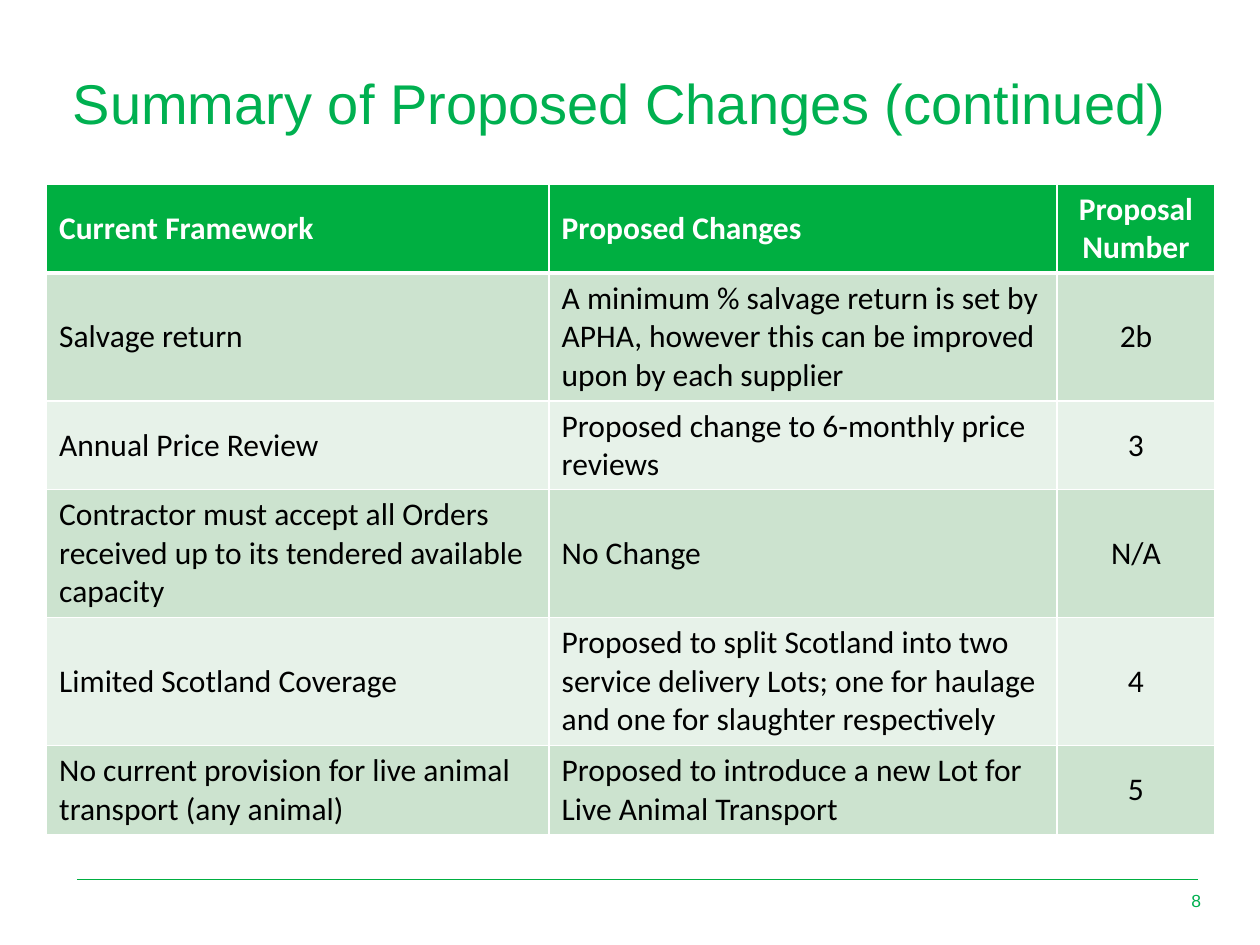
from dataclasses import dataclass

from lxml.etree import SubElement
from pptx import Presentation
from pptx.dml.color import RGBColor
from pptx.enum.shapes import MSO_CONNECTOR
from pptx.enum.text import MSO_ANCHOR, PP_ALIGN
from pptx.oxml.ns import qn
from pptx.slide import Slide
from pptx.table import _Cell
from pptx.text.text import TextFrame
from pptx.util import Cm, Pt

COLOURS = {
    "title": "00B050",
    "header": "00AF41",
    "dark_band": "CCE3CF",
    "light_band": "E7F2E9",
    "white": "FFFFFF",
    "black": "000000",
}
FORMATS = {
    "title": {"name": "Arial", "size": Pt(32)},
    "number": {"name": "Arial", "size": Pt(10)},
    "header": {"name": "Calibri", "size": Pt(18), "bold": True},
    "body": {"name": "Calibri", "size": Pt(18), "bold": False},
}
COLUMN_WIDTHS = (10.13, 10.24, 3.18)
COLUMN_ALIGNMENTS = (PP_ALIGN.LEFT, PP_ALIGN.LEFT, PP_ALIGN.CENTER)
ROW_HEIGHTS = {2: 1.79, 3: 2.58}


@dataclass(frozen=True)
class Label:
    """A single-line text box, with its place in centimetres."""

    text: str
    left: float
    top: float
    width: float
    height: float
    style: str
    frame: dict
    paragraph: dict


@dataclass(frozen=True)
class Change:
    """One table row and the number of text lines it holds."""

    current: str
    proposed: str
    number: str
    lines: int


LABELS = (
    Label("Summary of Proposed Changes (continued)", 1.22, 1.3, 22.96, 1.35, "title",
          {"margin_top": Cm(0.23), "vertical_anchor": MSO_ANCHOR.TOP},
          {"line_spacing": 0.9}),
    Label("8", 23.32, 17.65, 1.14, 1.02, "number",
          {"vertical_anchor": MSO_ANCHOR.MIDDLE}, {"alignment": PP_ALIGN.RIGHT}),
)
CHANGES = (
    Change("Current Framework", "Proposed Changes", "Proposal Number", 2),
    Change("Salvage return",
           "A minimum % salvage return is set by APHA, however this can be improved "
           "upon by each supplier", "2b", 3),
    Change("Annual Price Review", "Proposed change to 6-monthly price reviews", "3", 2),
    Change("Contractor must accept all Orders received up to its tendered available "
           "capacity", "No Change", "N/A", 3),
    Change("Limited Scotland Coverage",
           "Proposed to split Scotland into two service delivery Lots; one for haulage "
           "and one for slaughter respectively", "4", 3),
    Change("No current provision for live animal transport (any animal)",
           "Proposed to introduce a new Lot for Live Animal Transport", "5", 2),
)


def rgb(name: str) -> RGBColor:
    """Look up a named colour."""
    return RGBColor.from_string(COLOURS[name])


def set_attributes(target: object, values: dict) -> None:
    """Set each attribute in a dict of format values."""
    for name, value in values.items():
        setattr(target, name, value)


def write_text(frame: TextFrame, text: str, style: str, colour: str, layout: dict) -> None:
    """Write one formatted paragraph."""
    paragraph = frame.paragraphs[0]
    set_attributes(paragraph, layout)
    run = paragraph.add_run()
    run.text = text
    set_attributes(run.font, FORMATS[style])
    run.font.color.rgb = rgb(colour)


def add_label(slide: Slide, label: Label) -> None:
    """Add a text box."""
    place = (label.left, label.top, label.width, label.height)
    frame = slide.shapes.add_textbox(*map(Cm, place)).text_frame
    set_attributes(frame, {"word_wrap": True, **label.frame})
    write_text(frame, label.text, label.style, "title", label.paragraph)


def add_borders(cell: _Cell, widths: dict) -> None:
    """Give a cell white borders of the given widths."""
    properties = cell._tc.get_or_add_tcPr()
    for side, width in widths.items():
        line = SubElement(properties, qn(f"a:{side}"), w=str(Pt(width)))
        fill = SubElement(line, qn("a:solidFill"))
        SubElement(fill, qn("a:srgbClr"), val=COLOURS["white"])


def add_change_table(slide: Slide) -> None:
    """Add the table of current and proposed arrangements."""
    heights = [ROW_HEIGHTS[change.lines] for change in CHANGES]
    table = slide.shapes.add_table(
        len(CHANGES), len(COLUMN_WIDTHS), Cm(0.94), Cm(3.71),
        Cm(sum(COLUMN_WIDTHS)), Cm(sum(heights))).table
    for column, width in zip(table.columns, COLUMN_WIDTHS):
        column.width = Cm(width)
    for index, (change, height) in enumerate(zip(CHANGES, heights)):
        table.rows[index].height = Cm(height)
        style, colour = ("body", "black") if index else ("header", "white")
        band = ("dark_band" if index % 2 else "light_band") if index else "header"
        borders = {"lnL": 1, "lnR": 1, "lnT": 3 if index == 1 else 1,
                   "lnB": 1 if index else 3}
        texts = (change.current, change.proposed, change.number)
        for position, (text, alignment) in enumerate(zip(texts, COLUMN_ALIGNMENTS)):
            cell = table.cell(index, position)
            cell.vertical_anchor = MSO_ANCHOR.MIDDLE
            add_borders(cell, borders)
            cell.fill.solid()
            cell.fill.fore_color.rgb = rgb(band)
            write_text(cell.text_frame, text, style, colour, {"alignment": alignment})


def add_footer_line(slide: Slide) -> None:
    """Add the thin rule above the page number."""
    connector = slide.shapes.add_connector(
        MSO_CONNECTOR.STRAIGHT, Cm(1.55), Cm(17.73), Cm(24.16), Cm(17.73))
    connector.line.color.rgb = rgb("header")
    connector.line.width = Pt(0.5)
    SubElement(connector._element.spPr, qn("a:effectLst"))


def main() -> None:
    """Build and save the slide."""
    presentation = Presentation()
    set_attributes(presentation, {"slide_width": Cm(25.4), "slide_height": Cm(19.05)})
    slide = presentation.slides.add_slide(presentation.slide_layouts[6])
    add_footer_line(slide)
    for label in LABELS:
        add_label(slide, label)
    add_change_table(slide)
    presentation.save("out.pptx")


if __name__ == "__main__":
    main()
